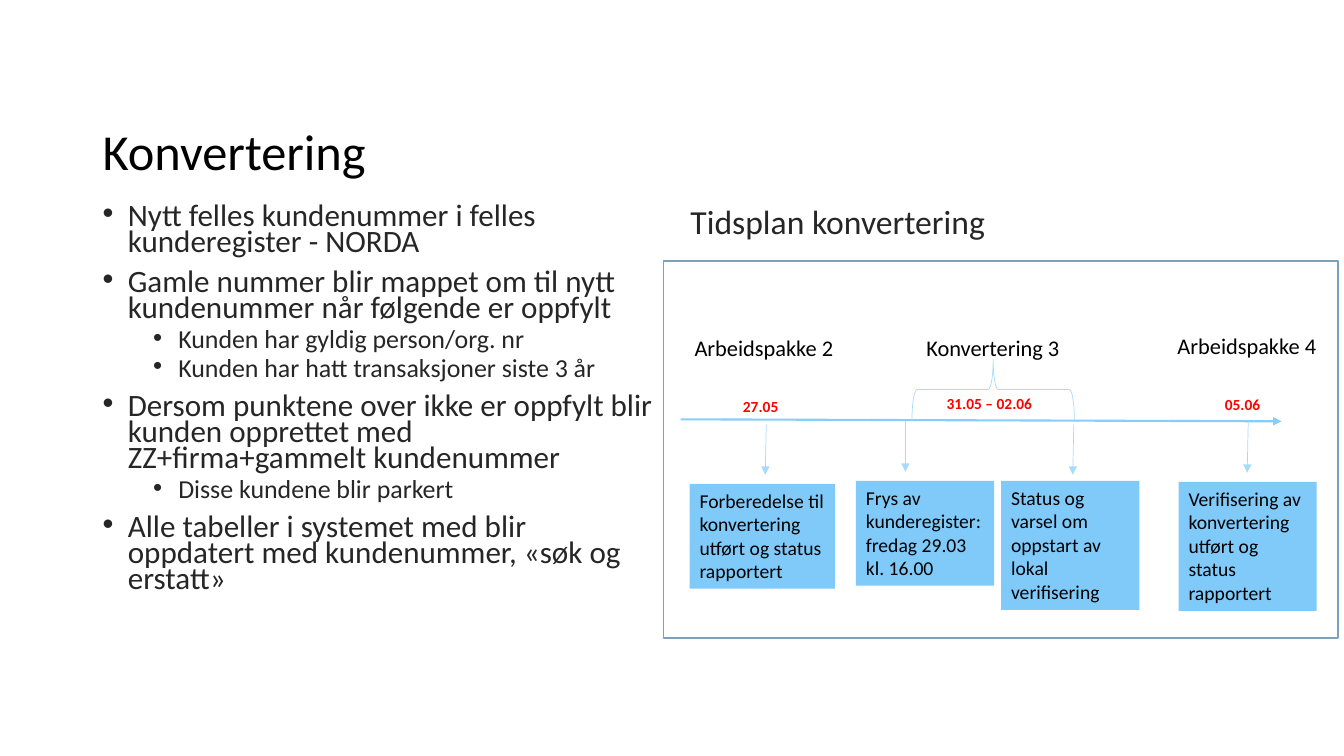
import dataclasses

import lxml.etree
import pptx
import pptx.dml.color
import pptx.enum.shapes
import pptx.enum.text
import pptx.oxml.ns
import pptx.util

Inches = pptx.util.Inches
Pt = pptx.util.Pt
Shapes = pptx.enum.shapes.MSO_SHAPE
Anchor = pptx.enum.text.MSO_ANCHOR
qn = pptx.oxml.ns.qn


@dataclasses.dataclass(frozen=True)
class Theme:
    font: str = "Calibri"
    black: str = "000000"
    body: str = "262626"
    date: str = "FF0000"
    white: str = "FFFFFF"
    frame: str = "7CA2BA"
    axis: str = "86CDF9"
    thin: str = "A8DBFB"
    task: str = "80CAF9"
    title_size: float = 36
    heading_size: float = 24
    bullet_sizes: tuple = (22.2, 18.5)
    label_size: float = 16
    task_size: float = 14
    date_size: float = 11


THEME = Theme()

BULLETS = [
    (0, "Nytt felles kundenummer i felles kunderegister - NORDA"),
    (0, "Gamle nummer blir mappet om til nytt kundenummer når følgende er oppfylt"),
    (1, "Kunden har gyldig person/org. nr"),
    (1, "Kunden har hatt transaksjoner siste 3 år"),
    (0, "Dersom punktene over ikke er oppfylt blir kunden opprettet med "
        "ZZ+firma+gammelt kundenummer"),
    (1, "Disse kundene blir parkert"),
    (0, "Alle tabeller i systemet med blir oppdatert med kundenummer, «søk og erstatt»"),
]
LABELS = [
    (6.79, 3.27, 1.59, "Arbeidspakke 2"),
    (9.09, 3.27, 1.53, "Konvertering 3"),
    (11.58, 3.25, 1.59, "Arbeidspakke 4"),
]
DATES = [
    (7.27, 3.89, 0.65, "27.05"),
    (9.29, 3.86, 1.65, "31.05 – 02.06"),
    (12.05, 3.87, 0.65, "05.06"),
]
TASKS = [
    (6.84, 4.8, 1.44, 1.04, ["Forberedelse til konvertering utført og status rapportert"]),
    (8.49, 4.77, 1.37, 1.04, ["Frys av kunderegister:", "fredag 29.03 kl. 16.00"]),
    (9.93, 4.77, 1.37, 1.28, ["Status og varsel om oppstart av lokal verifisering"]),
    (11.69, 4.78, 1.37, 1.28, ["Verifisering av konvertering utført og status rapportert"]),
]
DROPS = [(7.6, 7.59, 4.21), (8.98, 8.98, 4.18), (10.65, 10.64, 4.21), (12.38, 12.37, 4.19)]
DROP_LENGTH = 0.5


def rgb(color):
    return pptx.dml.color.RGBColor.from_string(color)


def add_span(para, text, size, color, bold=False):
    span = para.add_run()
    span.text = text
    span.font.name = THEME.font
    span.font.size = Pt(size)
    span.font.bold = bold
    span.font.color.rgb = rgb(color)


def write_lines(frame, lines, size, color, bold=False):
    for index, text in enumerate(lines):
        para = frame.add_paragraph() if index else frame.paragraphs[0]
        para.alignment = pptx.enum.text.PP_ALIGN.LEFT
        add_span(para, text, size, color, bold)


def add_text(page, left, top, width, height, lines, size, color,
             bold=False, wrap=True, anchor=Anchor.TOP):
    box = page.shapes.add_textbox(Inches(left), Inches(top), Inches(width), Inches(height))
    frame = box.text_frame
    frame.word_wrap = wrap
    frame.vertical_anchor = anchor
    write_lines(frame, lines, size, color, bold)
    return frame


def add_bullets(page, left, top, width, height):
    frame = add_text(page, left, top, width, height, [], THEME.bullet_sizes[0], THEME.body)
    for index, (level, text) in enumerate(BULLETS):
        para = frame.add_paragraph() if index else frame.paragraphs[0]
        para.level = level
        para.line_spacing = 0.7
        para.space_before = Pt(5 if level else 10)
        add_span(para, text, THEME.bullet_sizes[level], THEME.body)
        properties = para._p.get_or_add_pPr()
        properties.set("marL", str(Inches(0.25 + 0.5 * level)))
        properties.set("indent", str(Inches(-0.25)))
        lxml.etree.SubElement(properties, qn("a:buFont")).set("typeface", "Arial")
        lxml.etree.SubElement(properties, qn("a:buChar")).set("char", "•")


def add_block(page, kind, left, top, width, height, fill=None, line=None, weight=1):
    block = page.shapes.add_shape(kind, Inches(left), Inches(top), Inches(width), Inches(height))
    block.shadow.inherit = False
    if fill:
        block.fill.solid()
        block.fill.fore_color.rgb = rgb(fill)
    else:
        block.fill.background()
    if line:
        block.line.color.rgb = rgb(line)
        block.line.width = Pt(weight)
    else:
        block.line.fill.background()
    return block


def add_task(page, left, top, width, height, lines):
    block = add_block(page, Shapes.RECTANGLE, left, top, width, height, THEME.task)
    block.text_frame.word_wrap = True
    block.text_frame.vertical_anchor = Anchor.TOP
    write_lines(block.text_frame, lines, THEME.task_size, THEME.black)


def add_arrow(page, start, end, color, weight):
    arrow = page.shapes.add_connector(
        pptx.enum.shapes.MSO_CONNECTOR.STRAIGHT, *map(Inches, start + end))
    arrow.line.color.rgb = rgb(color)
    arrow.line.width = Pt(weight)
    line = arrow.line._get_or_add_ln()
    lxml.etree.SubElement(line, qn("a:tailEnd")).set("type", "triangle")
    lxml.etree.SubElement(arrow._element.spPr, qn("a:effectLst"))


def add_timeline(page):
    add_arrow(page, (6.75, 4.16), (12.71, 4.18), THEME.axis, 1.5)
    brace = add_block(page, Shapes.LEFT_BRACE, 9.55, 3.06, 0.6, 1.61, line=THEME.thin, weight=0.5)
    brace.rotation = 90
    for start, end, top in DROPS:
        add_arrow(page, (start, top), (end, top + DROP_LENGTH), THEME.thin, 0.5)
    for task in TASKS:
        add_task(page, *task)
    for left, top, width, text in LABELS:
        add_text(page, left, top, width, 0.37, [text], THEME.label_size, THEME.black, wrap=False)
    for left, top, width, text in DATES:
        add_text(page, left, top, width, 0.29, [text], THEME.date_size, THEME.date, bold=True)


def main():
    deck = pptx.Presentation()
    deck.slide_width = Inches(13.33)
    deck.slide_height = Inches(7.5)
    page = deck.slides.add_slide(deck.slide_layouts[6])
    add_block(page, Shapes.RECTANGLE, 6.58, 2.59, 6.69, 3.74, THEME.white, THEME.frame)
    title = add_text(page, 0.92, 0.4, 10.7, 1.45, ["Konvertering"],
                     THEME.title_size, THEME.black, anchor=Anchor.BOTTOM)
    title.paragraphs[0].line_spacing = 0.9
    add_bullets(page, 0.92, 1.99, 5.67, 4.34)
    heading = add_text(page, 6.75, 1.99, 5.67, 0.6, ["Tidsplan konvertering"],
                       THEME.heading_size, THEME.body)
    heading.paragraphs[0].line_spacing = 0.9
    heading.paragraphs[0].space_before = Pt(10)
    add_timeline(page)
    deck.save("out.pptx")


if __name__ == "__main__":
    main()
